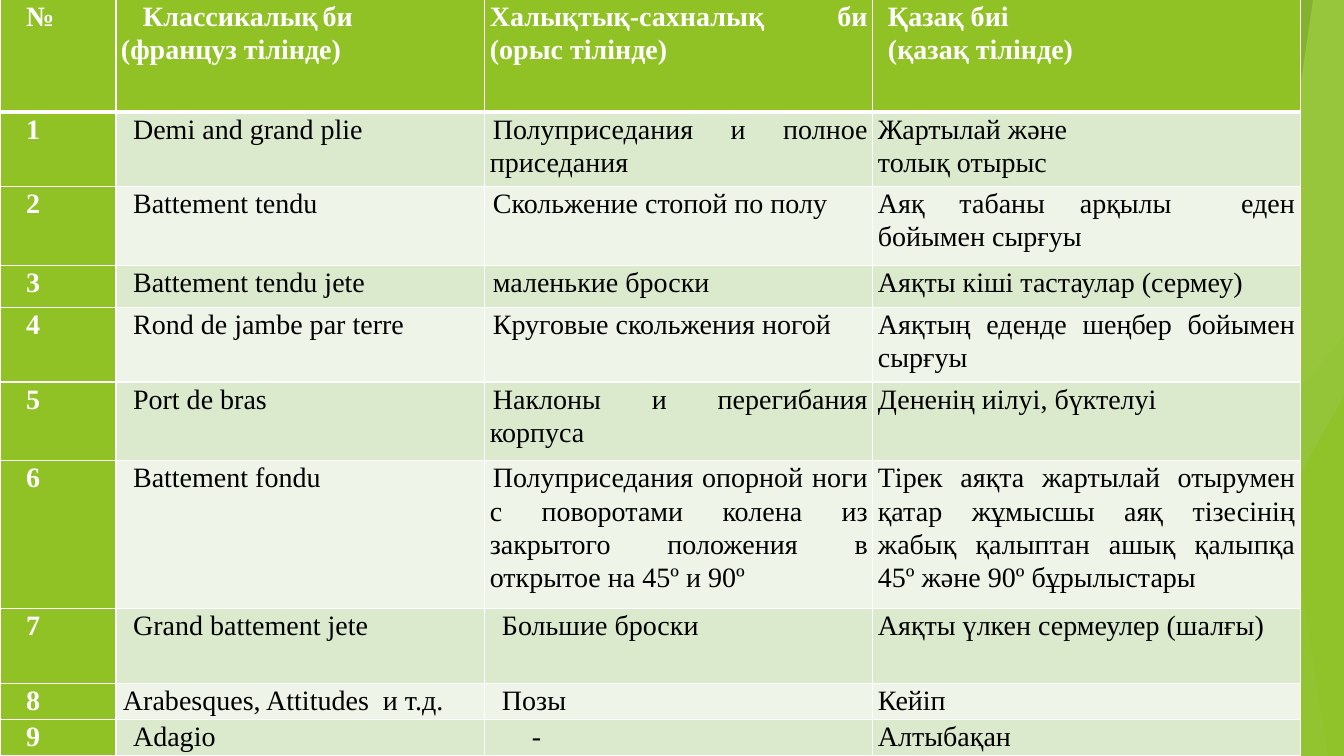
"""Build a slide with a table of dance terms in three languages."""
from lxml import etree
from pptx import Presentation
from pptx.dml.color import RGBColor
from pptx.enum.shapes import MSO_CONNECTOR, MSO_SHAPE
from pptx.enum.text import PP_ALIGN
from pptx.oxml.ns import qn
from pptx.util import Pt

STRAIGHT = MSO_CONNECTOR.STRAIGHT
TRIANGLE = MSO_SHAPE.ISOSCELES_TRIANGLE
JUSTIFY, LEFT = PP_ALIGN.JUSTIFY, PP_ALIGN.LEFT
COLORS = {
    "green": "90C226", "mid": "54A021", "dark": "3F7819", "lime": "C0E474",
    "gray": "D9D9D9", "white": "FFFFFF", "black": "000000",
    "odd": "DBE9CD", "even": "EEF4E8",
}
WIDTH, HEIGHT = 960, 540
COLUMN_WIDTHS = [82.8, 263.5, 277.2, 305.3]
ROW_HEIGHTS = [80.6, 53.3, 56.2, 30.2, 53.3, 56.2, 105.8, 53.3, 25.9, 25.9]
HEADER_INDENTS = [15, 15.7, 0, 7.2]
BODY_INDENTS = [15, 8.64, 2.16, 0]
SPECIAL_INDENTS = {(7, 2): 8.64, (8, 1): 1.44, (8, 2): 8.64, (9, 2): 30}
ROWS = [
    ["№", "Классикалық\tби\v(француз тілінде)",
     "Халықтық-сахналық би (орыс тілінде)", "Қазақ биі\n(қазақ тілінде)"],
    ["1", "Demi and grand plie", "Полуприседания и полное приседания",
     "Жартылай және\nтолық отырыс"],
    ["2", "Battement tendu", "Скольжение стопой по полу",
     "Аяқ табаны арқылы  еден бойымен сырғуы"],
    ["3", "Battement tendu jete", "маленькие броски",
     "Аяқты кіші тастаулар (сермеу)"],
    ["4", "Rond de jambe par terre", "Круговые скольжения ногой",
     "Аяқтың еденде шеңбер бойымен сырғуы"],
    ["5", "Port de bras", "Наклоны и перегибания корпуса",
     "Дененің иілуі, бүктелуі"],
    ["6", "Battement fondu",
     "Полуприседания опорной ноги с поворотами колена из закрытого "
     "положения в открытое на 45º и 90º",
     "Тірек аяқта жартылай отырумен қатар жұмысшы аяқ тізесінің "
     "жабық қалыптан ашық қалыпқа 45º және 90º бұрылыстары"],
    ["7", "Grand battement jete", "Большие броски",
     "Аяқты үлкен сермеулер (шалғы)"],
    ["8", "Arabesques, Attitudes  и т.д.", "Позы", "Кейіп"],
    ["9", "Adagio", "-", "Алтыбақан"],
]
FACETS = [
    ("band", 884, 723, "green", 30),
    ("band", 756, 852, "green", 20),
    ("triangle", 703.5, 240, "mid", 72),
    ("band", 735, 930, "dark", 70),
    ("band", 938, 858, "lime", 70),
    ("band", 861, 949, "green", 65),
    ("triangle", 816.5, 283, "green", 80),
]


def write_text(cell, text, *, color, bold, indent):
    frame = cell.text_frame
    frame.text = text
    for para in frame.paragraphs:
        para.alignment = LEFT if "\t" in text else JUSTIFY
        para.line_spacing = 1.07
        properties = para._p.get_or_add_pPr()
        properties.set("marL", "0")
        properties.set("indent", str(int(Pt(indent))))
        if "\t" in text:
            tabs = etree.SubElement(properties, qn("a:tabLst"))
            etree.SubElement(tabs, qn("a:tab"), pos=str(int(Pt(157))), algn="l")
        for span in para.runs:
            span.font.name = "Times New Roman"
            span.font.size = Pt(20)
            span.font.bold = bold
            span.font.color.rgb = RGBColor.from_string(COLORS[color])


def set_borders(cell, bottom):
    properties = cell._tc.get_or_add_tcPr()
    sides = {"lnL": 1, "lnR": 1, "lnT": 1, "lnB": bottom}
    for position, (side, weight) in enumerate(sides.items()):
        line = etree.Element(qn(f"a:{side}"), w=str(int(Pt(weight))))
        fill = etree.SubElement(line, qn("a:solidFill"))
        etree.SubElement(fill, qn("a:srgbClr"), val=COLORS["white"])
        properties.insert(position, line)


deck = Presentation()
deck.slide_width, deck.slide_height = Pt(WIDTH), Pt(HEIGHT)
page = deck.slides.add_slide(deck.slide_layouts[6])

ray = page.shapes.add_connector(STRAIGHT, Pt(WIDTH), Pt(290), Pt(584.5), Pt(HEIGHT))
ray.line.color.rgb = RGBColor.from_string(COLORS["gray"])
ray.line.width = Pt(0.75)
etree.SubElement(ray._element.spPr, qn("a:effectLst"))

for kind, first, second, color, opacity in FACETS:
    if kind == "band":
        builder = page.shapes.build_freeform(Pt(first), 0)
        builder.add_line_segments(
            [(Pt(WIDTH), 0), (Pt(WIDTH), Pt(HEIGHT)), (Pt(second), Pt(HEIGHT))])
        facet = builder.convert_to_shape()
    else:
        facet = page.shapes.add_shape(
            TRIANGLE, Pt(first), Pt(second), Pt(WIDTH - first), Pt(HEIGHT - second))
        facet.adjustments[0] = 1
    facet.shadow.inherit = False
    facet.line.fill.background()
    facet.fill.solid()
    facet.fill.fore_color.rgb = RGBColor.from_string(COLORS[color])
    tint = facet._element.spPr.find(qn("a:solidFill"))[0]
    etree.SubElement(tint, qn("a:alpha"), val=str(opacity * 1000))

terms = page.shapes.add_table(
    len(ROWS), len(COLUMN_WIDTHS), 0, Pt(-0.7),
    Pt(sum(COLUMN_WIDTHS)), Pt(sum(ROW_HEIGHTS))).table
for column, width in zip(terms.columns, COLUMN_WIDTHS):
    column.width = Pt(width)
for row, height in zip(terms.rows, ROW_HEIGHTS):
    row.height = Pt(height)

for row_index, texts in enumerate(ROWS):
    indents = BODY_INDENTS if row_index else HEADER_INDENTS
    for column_index, text in enumerate(texts):
        cell = terms.cell(row_index, column_index)
        heading = row_index == 0 or column_index == 0
        shade = "green" if heading else "odd" if row_index % 2 else "even"
        cell.margin_left = cell.margin_right = Pt(3.6)
        cell.margin_top = cell.margin_bottom = 0
        cell.fill.solid()
        cell.fill.fore_color.rgb = RGBColor.from_string(COLORS[shade])
        set_borders(cell, bottom=1 if row_index else 3)
        write_text(
            cell, text, color="white" if heading else "black", bold=heading,
            indent=SPECIAL_INDENTS.get((row_index, column_index), indents[column_index]))

deck.save("out.pptx")
